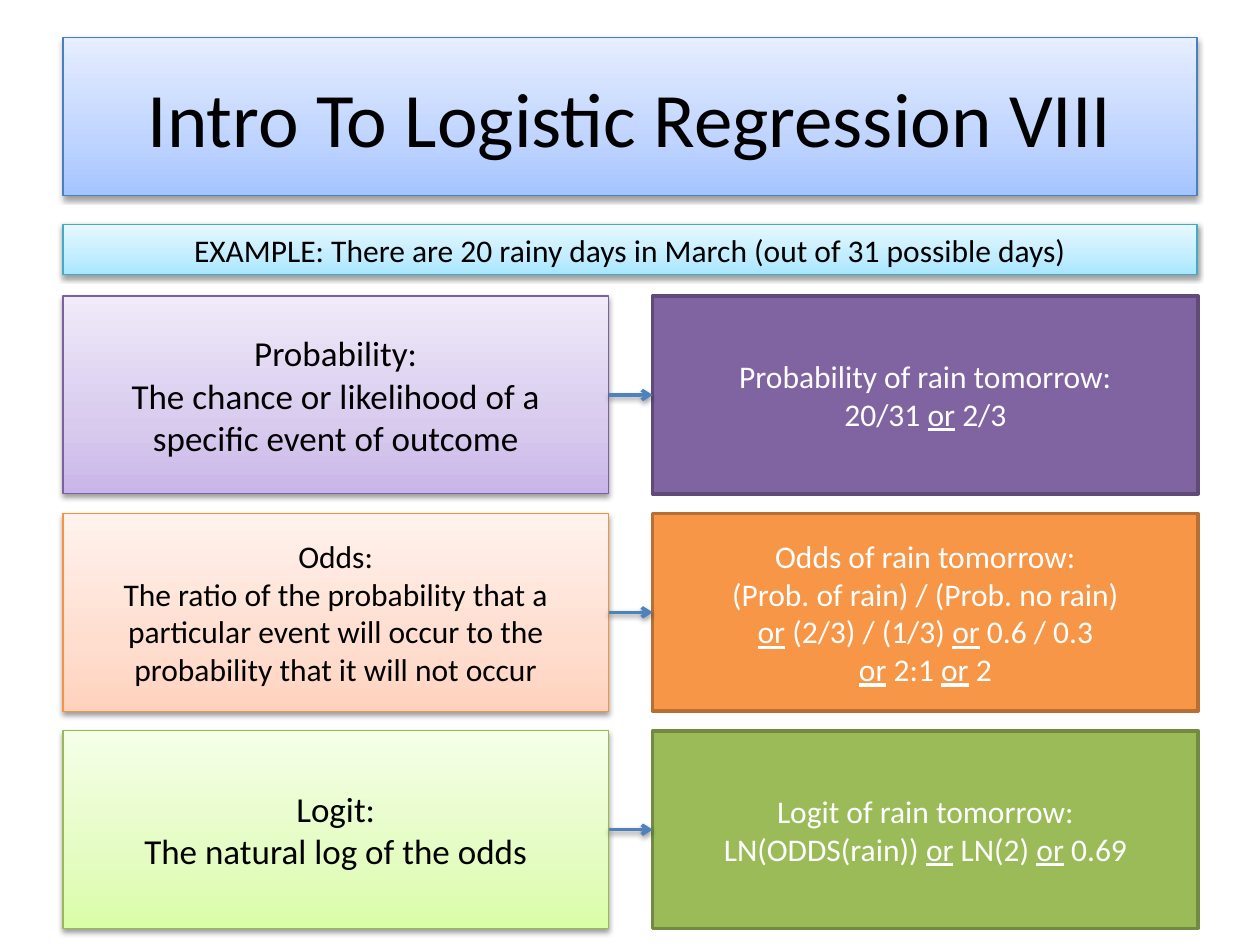
"""Builds the logistic regression slide on probability, odds and logit."""
from dataclasses import dataclass

import lxml.etree
import pptx
import pptx.dml.color
import pptx.enum.shapes
import pptx.enum.text
import pptx.oxml
import pptx.oxml.ns
import pptx.util

qn = pptx.oxml.ns.qn


@dataclass(frozen=True)
class Theme:
    font: str = "Calibri"
    dark: str = "000000"
    light: str = "FFFFFF"
    arrow: str = "4F81BD"
    title: tuple = ("A4C4FF", "BFD4FF", "E6EEFF")
    title_line: str = "4B7EBC"
    example: tuple = ("A7E6FF", "C1EDFF", "E7F8FF")
    example_line: str = "46AAC5"
    title_size: int = 44
    term_size: int = 20
    body_size: int = 18
    thin: float = 0.75
    thick: float = 2


@dataclass(frozen=True)
class Grid:
    left: float = 0.5
    width: float = 9
    column: float = 4.33
    column_pitch: float = 4.68
    top: float = 2.35
    row: float = 1.57
    row_pitch: float = 1.725

    def cell(self, col: int, row: int) -> tuple:
        return (self.left + col * self.column_pitch, self.top + row * self.row_pitch,
                self.column, self.row)


@dataclass(frozen=True)
class Concept:
    term: tuple
    size: int
    answer: tuple
    shades: tuple
    term_line: str
    fill: str
    answer_line: str


THEME, GRID = Theme(), Grid()
CONCEPTS = (
    Concept(("Probability:", "The chance or likelihood of a specific event of outcome"),
            THEME.term_size,
            ("Probability of rain tomorrow:", "20/31 _or_ 2/3"),
            ("C9B5E8", "D8CBEE", "F0EAF9"), "7D60A0", "8064A2", "5F4A78"),
    Concept(("Odds:", "The ratio of the probability that a particular event will occur "
             "to the probability that it will not occur"),
            THEME.body_size,
            ("Odds of rain tomorrow:", "(Prob. of rain) / (Prob. no rain)",
             "_or_ (2/3) / (1/3) _or_ 0.6 / 0.3", "_or_ 2:1 _or_ 2"),
            ("FFD2BD", "FFDED0", "FFF2ED"), "F69240", "F79646", "B76F34"),
    Concept(("Logit:", "The natural log of the odds"),
            THEME.term_size,
            ("Logit of rain tomorrow:", "LN(ODDS(rain)) _or_ LN(2) _or_ 0.69"),
            ("DAFDA7", "E4FCC2", "F5FFE7"), "98B955", "9BBB59", "738A42"),
)


def rgb(value: str) -> pptx.dml.color.RGBColor:
    return pptx.dml.color.RGBColor.from_string(value)


def set_line(sp, color: str, width: float) -> None:
    sp.line.color.rgb = rgb(color)
    sp.line.width = pptx.util.Pt(width)


def add_shadow(effects) -> None:
    shadow = lxml.etree.SubElement(effects, qn("a:outerShdw"), blurRad="40000",
                                   dist="20000", dir="5400000", rotWithShape="0")
    color = lxml.etree.SubElement(shadow, qn("a:srgbClr"), val="000000")
    lxml.etree.SubElement(color, qn("a:alpha"), val="38000")


def set_gradient(sp, shades: tuple) -> None:
    sp.fill.gradient()
    sp.fill.gradient_angle = 90
    stops = sp.element.spPr.find(".//" + qn("a:gsLst"))
    for stop in list(stops):
        stops.remove(stop)
    for position, shade in zip((0, 35, 100), shades):
        stop = lxml.etree.SubElement(stops, qn("a:gs"), pos=str(position * 1000))
        lxml.etree.SubElement(stop, qn("a:srgbClr"), val=shade)
    add_shadow(sp.element.spPr.find(qn("a:effectLst")))


def set_text(sp, lines: tuple, size: int, color: str) -> None:
    tf = sp.text_frame
    tf.word_wrap = True
    tf.vertical_anchor = pptx.enum.text.MSO_ANCHOR.MIDDLE
    for i, line in enumerate(lines):
        p = tf.add_paragraph() if i else tf.paragraphs[0]
        p.alignment = pptx.enum.text.PP_ALIGN.CENTER
        for j, part in enumerate(line.split("_")):
            if part:
                r = p.add_run()
                r.text = part
                r.font.name = THEME.font
                r.font.size = pptx.util.Pt(size)
                r.font.color.rgb = rgb(color)
                if j % 2:
                    r.font.underline = True


def style_soft(sp, shades: tuple, line: str, lines: tuple, size: int) -> None:
    sp.shadow.inherit = False
    set_gradient(sp, shades)
    set_line(sp, line, THEME.thin)
    set_text(sp, lines, size, THEME.dark)


def add_box(s, box: tuple):
    return s.shapes.add_shape(pptx.enum.shapes.MSO_SHAPE.RECTANGLE,
                              *map(pptx.util.Inches, box))


def add_answer(s, box: tuple, concept: Concept) -> None:
    sp = add_box(s, box)
    sp.shadow.inherit = False
    sp.fill.solid()
    sp.fill.fore_color.rgb = rgb(concept.fill)
    set_line(sp, concept.answer_line, THEME.thick)
    set_text(sp, concept.answer, THEME.body_size, THEME.light)


def add_arrow(s, row: int) -> None:
    left, top, width, height = GRID.cell(0, row)
    y = top + height / 2
    ends = (left + width, y, left + GRID.column_pitch, y)
    sp = s.shapes.add_connector(pptx.enum.shapes.MSO_CONNECTOR.STRAIGHT,
                                *map(pptx.util.Inches, ends))
    set_line(sp, THEME.arrow, THEME.thick)
    spPr = sp.element.spPr
    lxml.etree.SubElement(spPr.find(qn("a:ln")), qn("a:tailEnd"), type="arrow")
    add_shadow(lxml.etree.SubElement(spPr, qn("a:effectLst")))


def main() -> None:
    prs = pptx.Presentation()
    prs.slide_width, prs.slide_height = pptx.util.Inches(10), pptx.util.Inches(7.5)
    s = prs.slides.add_slide(prs.slide_layouts[5])

    title = s.shapes.title
    title.left, title.top, title.width, title.height = map(
        pptx.util.Inches, (GRID.left, 0.3, GRID.width, 1.25))
    style_soft(title, THEME.title, THEME.title_line,
               ("Intro To Logistic Regression VIII",), THEME.title_size)

    example = add_box(s, (GRID.left, 1.78, GRID.width, 0.4))
    style_soft(example, THEME.example, THEME.example_line,
               ("EXAMPLE: There are 20 rainy days in March (out of 31 possible days)",),
               THEME.body_size)

    for row, concept in enumerate(CONCEPTS):
        style_soft(add_box(s, GRID.cell(0, row)), concept.shades, concept.term_line,
                   concept.term, concept.size)
        add_answer(s, GRID.cell(1, row), concept)
        add_arrow(s, row)
    prs.save("out.pptx")


if __name__ == "__main__":
    main()
